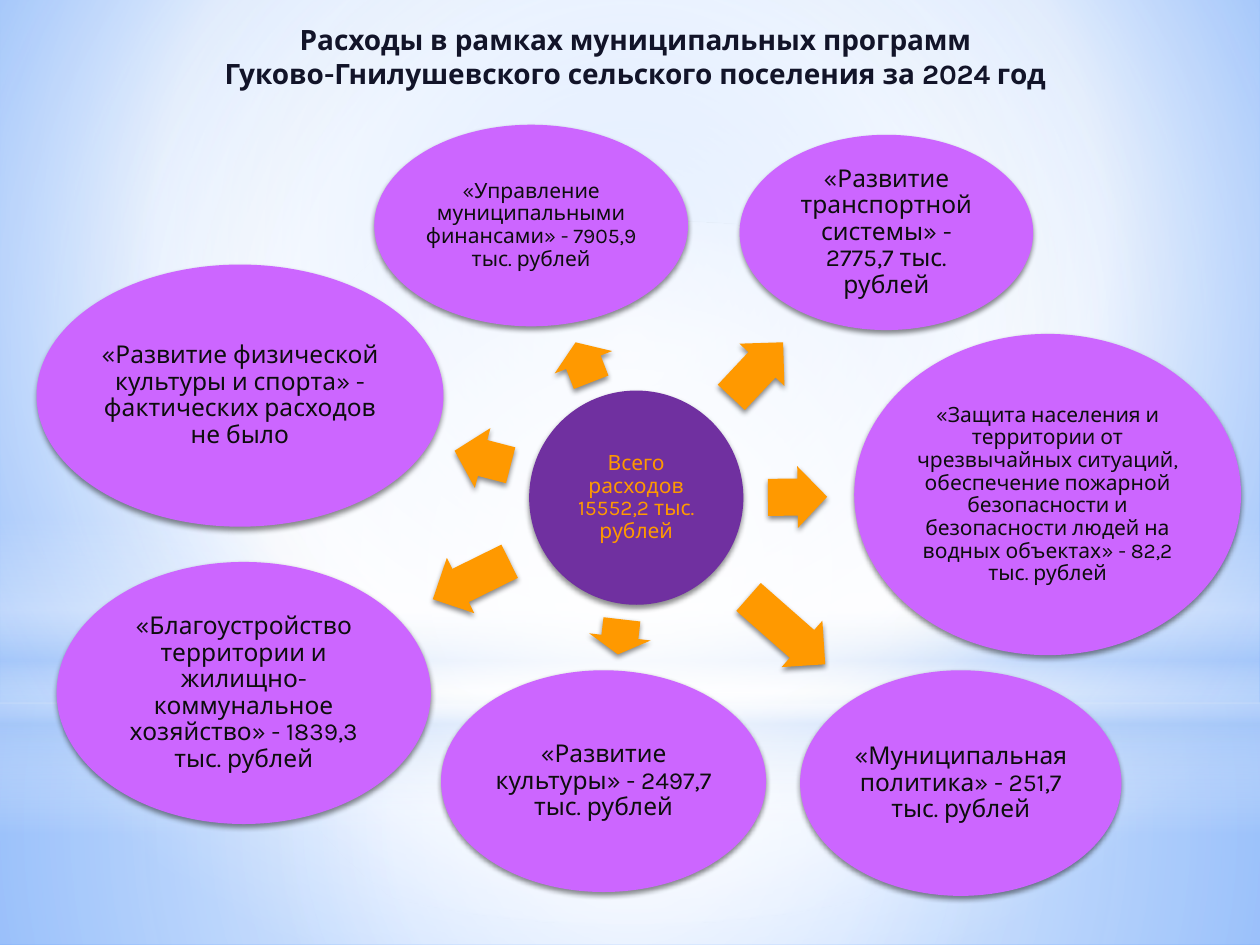
from dataclasses import dataclass
from typing import Optional

from pptx import Presentation
from pptx.dml.color import RGBColor
from pptx.enum.shapes import MSO_SHAPE
from pptx.enum.text import MSO_ANCHOR, MSO_AUTO_SIZE, PP_ALIGN
from pptx.oxml import parse_xml
from pptx.oxml.ns import nsdecls, qn
from pptx.util import Inches, Pt

OVAL = MSO_SHAPE.OVAL
RECTANGLE = MSO_SHAPE.RECTANGLE
RIGHT_ARROW = MSO_SHAPE.RIGHT_ARROW
CENTER = PP_ALIGN.CENTER
MIDDLE = MSO_ANCHOR.MIDDLE
TOP = MSO_ANCHOR.TOP
FIT_SHAPE = MSO_AUTO_SIZE.SHAPE_TO_FIT_TEXT

COLUMNS, ROWS = 100, 75
CELL = Inches(10) // COLUMNS
FONT = "Karla"
ORANGE, PURPLE, VIOLET = "FF9900", "7030A0", "CC66FF"
NEAR_BLACK, TITLE_COLOR, OUTLINE_COLOR = "0D0D0D", "121429", "5795CB"
WHITE, PALE_BLUE = "FFFFFF", "ACCBF9"
ARROW_BREADTH = 4.9
CENTERED = (50, 50, 50, 50)


@dataclass(frozen=True)
class Box:
    column: float
    row: float
    columns: float
    rows: float


@dataclass(frozen=True)
class Stop:
    position: int
    color: str
    opacity: int = 100


@dataclass(frozen=True)
class Backdrop:
    kind: int
    box: Box
    stops: tuple[Stop, ...]
    focus: Optional[tuple[int, ...]] = CENTERED


@dataclass(frozen=True)
class Arrow:
    column: float
    row: float
    length: float
    angle: float


@dataclass(frozen=True)
class Program:
    text: str
    size: int
    box: Box
    arrow: Arrow


BACKGROUND = (Stop(0, "95C0FF"), Stop(60, WHITE), Stop(100, "5599FF"))
BACKDROPS = (
    Backdrop(RECTANGLE, Box(0, 55.8, COLUMNS, 19.2),
             (Stop(0, WHITE, 91), Stop(37, WHITE, 76), Stop(100, PALE_BLUE, 79))),
    Backdrop(RECTANGLE, Box(0, 0, COLUMNS, 55.8),
             (Stop(0, WHITE, 89), Stop(48, WHITE, 62), Stop(100, PALE_BLUE, 79))),
    Backdrop(RECTANGLE, Box(0, 41.2, COLUMNS, 25),
             (Stop(0, WHITE, 0), Stop(29, WHITE, 30), Stop(45, PALE_BLUE, 40),
              Stop(55, WHITE, 26), Stop(65, PALE_BLUE, 60), Stop(100, WHITE, 0)), None),
    Backdrop(OVAL, Box(0, 17.5, COLUMNS, 55.8), (Stop(0, WHITE), Stop(56, WHITE, 0))),
)
TITLE = ("Расходы в рамках муниципальных программ",
         "Гуково-Гнилушевского сельского поселения за 2024 год")
TOTAL = "Всего расходов 15552,2 тыс. рублей"
PROGRAMS = (
    Program("«Управление муниципальными финансами» - 7905,9 тыс. рублей", 12,
            Box(29.7, 9.9, 24.9, 16), Arrow(46.3, 28.75, 3.4, 248.7)),
    Program("«Защита населения и территории от чрезвычайных ситуаций, обеспечение пожарной "
            "безопасности и безопасности людей на водных объектах» - 82,2 тыс. рублей", 12,
            Box(67.8, 26.5, 30.7, 25.5), Arrow(63.3, 39.45, 4.7, 359.4)),
    Program("«Развитие транспортной системы» - 2775,7 тыс. рублей", 14,
            Box(58.7, 10.7, 23.3, 15.5), Arrow(60.1, 29.35, 6, 313.2)),
    Program("«Благоустройство территории и жилищно-коммунальное хозяйство» - 1839,3 тыс. рублей", 14,
            Box(4.5, 44.6, 29.7, 20.8), Arrow(37.4, 46.05, 6.8, 153.7)),
    Program("«Развитие культуры» - 2497,7 тыс. рублей", 14,
            Box(35, 53.2, 25.8, 17.6), Arrow(49.2, 50.55, 2.8, 96.6)),
    Program("«Муниципальная политика» - 251,7 тыс. рублей", 14,
            Box(63.5, 53.2, 25.5, 17.9), Arrow(62.45, 50.05, 8.1, 41.3)),
    Program("«Развитие физической культуры и спорта» - фактических расходов не было", 14,
            Box(2.9, 21, 32.3, 20.8), Arrow(38.3, 36.35, 4.6, 194.6)),
)


def rgb(color: str) -> RGBColor:
    return RGBColor.from_string(color)


def place(box: Box) -> tuple[int, ...]:
    return tuple(round(value * CELL) for value in (box.column, box.row, box.columns, box.rows))


def set_gradient(fill, holder, stops, focus) -> None:
    fill.gradient()
    stop_list = "".join(
        f'<a:gs pos="{stop.position * 1000}"><a:srgbClr val="{stop.color}">'
        f'<a:alpha val="{stop.opacity * 1000}"/></a:srgbClr></a:gs>' for stop in stops)
    if focus:
        left, top, right, bottom = (share * 1000 for share in focus)
        direction = (f'<a:path path="circle"><a:fillToRect l="{left}" t="{top}" '
                     f'r="{right}" b="{bottom}"/></a:path>')
    else:
        direction = '<a:lin ang="5400000" scaled="0"/>'
    gradient = parse_xml(f'<a:gradFill {nsdecls("a")} rotWithShape="1">'
                         f'<a:gsLst>{stop_list}</a:gsLst>{direction}</a:gradFill>')
    holder.replace(holder.find(qn("a:gradFill")), gradient)


def add_plain_shape(slide, kind: int, box: Box):
    shape = slide.shapes.add_shape(kind, *place(box))
    shape.shadow.inherit = False
    shape.line.fill.background()
    return shape


def add_backdrop(slide, backdrop: Backdrop) -> None:
    shape = add_plain_shape(slide, backdrop.kind, backdrop.box)
    set_gradient(shape.fill, shape.element.spPr, backdrop.stops, backdrop.focus)


def add_raised_shape(slide, kind: int, box: Box, color: str):
    shape = add_plain_shape(slide, kind, box)
    shape.fill.solid()
    shape.fill.fore_color.rgb = rgb(color)
    shape.element.spPr.find(qn("a:effectLst")).append(parse_xml(
        f'<a:outerShdw {nsdecls("a")} blurRad="{Pt(3.1)}" dist="{Pt(1.8)}" dir="5400000" '
        'rotWithShape="0"><a:srgbClr val="000000"><a:alpha val="45000"/></a:srgbClr></a:outerShdw>'))
    return shape


def write_text(shape, *lines: str, size: int, color: str, bold: bool = False,
               anchor=MIDDLE, spacing: float = 0.9, outline: Optional[str] = None) -> None:
    frame = shape.text_frame
    frame.word_wrap = True
    frame.vertical_anchor = anchor
    frame.text = "\n".join(lines)
    for paragraph in frame.paragraphs:
        paragraph.alignment = CENTER
        paragraph.line_spacing = spacing
        for run in paragraph.runs:
            run.font.name = FONT
            run.font.size = Pt(size)
            run.font.bold = bold
            run.font.color.rgb = rgb(color)
            if outline:
                run.font._element.insert(0, parse_xml(
                    f'<a:ln {nsdecls("a")} w="{Pt(0.83)}"><a:solidFill>'
                    f'<a:srgbClr val="{outline}"/></a:solidFill></a:ln>'))


def add_bubble(slide, box: Box, text: str, size: int, fill: str, color: str) -> None:
    shape = add_raised_shape(slide, OVAL, box, fill)
    frame = shape.text_frame
    frame.margin_left = frame.margin_right = Inches(0.02)
    frame.margin_top = frame.margin_bottom = Inches(0.02)
    write_text(shape, text, size=size, color=color)


def add_arrow(slide, arrow: Arrow) -> None:
    box = Box(arrow.column - arrow.length / 2, arrow.row - ARROW_BREADTH / 2,
              arrow.length, ARROW_BREADTH)
    shape = add_raised_shape(slide, RIGHT_ARROW, box, ORANGE)
    shape.adjustments[0] = 0.6
    shape.adjustments[1] = 0.5
    shape.rotation = arrow.angle


def main() -> None:
    presentation = Presentation()
    presentation.slide_width = COLUMNS * CELL
    presentation.slide_height = ROWS * CELL
    slide = presentation.slides.add_slide(presentation.slide_layouts[6])
    background_fill = slide.background.fill
    set_gradient(background_fill, slide.element.find(".//" + qn("p:bgPr")),
                 BACKGROUND, (20, 10, 20, 60))
    for backdrop in BACKDROPS:
        add_backdrop(slide, backdrop)
    title = slide.shapes.add_textbox(*place(Box(2, 1.3, 96.9, 6.4)))
    write_text(title, *TITLE, size=16, color=TITLE_COLOR, bold=True, anchor=TOP,
               spacing=1.0, outline=OUTLINE_COLOR)
    title.text_frame.auto_size = FIT_SHAPE
    add_bubble(slide, Box(42, 31, 17, 17), TOTAL, 12, PURPLE, ORANGE)
    for program in PROGRAMS:
        add_arrow(slide, program.arrow)
        add_bubble(slide, program.box, program.text, program.size, VIOLET, NEAR_BLACK)
    presentation.save("out.pptx")


if __name__ == "__main__":
    main()
